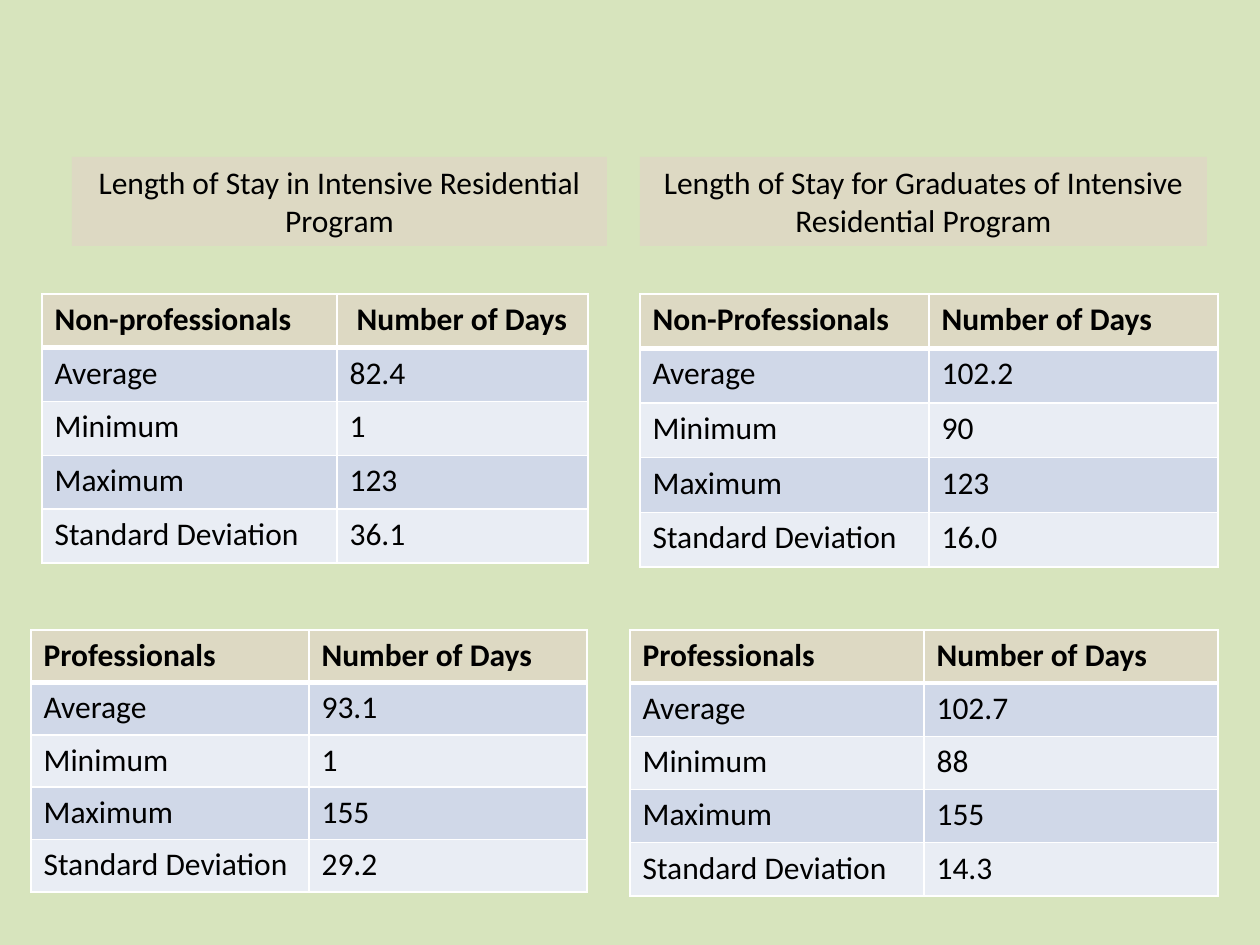
from pptx import Presentation
from pptx.dml.color import RGBColor as RGB
from pptx.enum.shapes import MSO_SHAPE as SHAPE
from pptx.enum.text import MSO_ANCHOR as ANCHOR, MSO_AUTO_SIZE as AUTO, PP_ALIGN as ALIGN
from pptx.oxml import parse_xml
from pptx.oxml.ns import nsdecls
from pptx.util import Pt

PX = 914400 / 126
FONT, SIZE = "Calibri", 18
COLORS = {"background": "D7E4BD", "header": "DDD9C3", "odd": "D0D8E8",
          "even": "E9EDF4", "border": "FFFFFF", "text": "000000"}

# caption, (left, top, width, height)
CAPTIONS = [
    ("Length of Stay in Intensive Residential Program", (72, 157, 535, 89)),
    ("Length of Stay for Graduates of Intensive Residential Program", (640, 157, 567, 89)),
]
MEASURES = ["Average", "Minimum", "Maximum", "Standard Deviation"]
# headers, values, (left, top), column widths, table height
TABLES = [
    (("Non-professionals", " Number of Days"), ("82.4", "1", "123", "36.1"),
     (42, 294), (295, 251), 269),
    (("Professionals", "Number of Days"), ("93.1", "1", "155", "29.2"),
     (31, 630), (278, 278), 262),
    (("Non-Professionals", "Number of Days"), ("102.2", "90", "123", "16.0"),
     (640, 294), (289, 289), 273),
    (("Professionals", "Number of Days"), ("102.7", "88", "155", "14.3"),
     (630, 630), (294, 294), 266),
]


def px(n):
    return round(n * PX)


def color(name):
    return RGB.from_string(COLORS[name])


def add_text(p, text, bold=False):
    r = p.add_run()
    r.text = text
    r.font.name, r.font.size, r.font.bold = FONT, Pt(SIZE), bold
    r.font.color.rgb = color("text")


def set_borders(cell, widths):
    """Draw the cell's edges; widths maps L, R, T and B to points."""
    tcPr = cell._tc.get_or_add_tcPr()
    for i, (side, width) in enumerate(widths.items()):
        tcPr.insert(i, parse_xml(
            f'<a:ln{side} {nsdecls("a")} w="{Pt(width)}"><a:solidFill>'
            f'<a:srgbClr val="{COLORS["border"]}"/></a:solidFill></a:ln{side}>'))


def add_caption(s, text, box):
    sp = s.shapes.add_shape(SHAPE.RECTANGLE, *map(px, box))
    sp.shadow.inherit = False
    sp.fill.solid()
    sp.fill.fore_color.rgb = color("header")
    sp.line.fill.background()
    tf = sp.text_frame
    tf.word_wrap, tf.auto_size = True, AUTO.SHAPE_TO_FIT_TEXT
    tf.vertical_anchor = ANCHOR.TOP
    p = tf.paragraphs[0]
    p.alignment = ALIGN.CENTER
    add_text(p, text)


def add_stay_table(s, headers, values, origin, widths, height):
    rows = [headers, *zip(MEASURES, values)]
    table = s.shapes.add_table(len(rows), len(headers), *map(px, origin),
                               px(sum(widths)), px(height)).table
    for col, width in zip(table.columns, widths):
        col.width = px(width)
    for i, row in enumerate(rows):
        table.rows[i].height = px(height / len(rows))
        fill = "header" if i == 0 else "odd" if i % 2 else "even"
        for j, text in enumerate(row):
            cell = table.cell(i, j)
            cell.fill.solid()
            cell.fill.fore_color.rgb = color(fill)
            set_borders(cell, {"L": 1, "R": 1, "T": 3 if i == 1 else 1,
                               "B": 3 if i == 0 else 1})
            add_text(cell.text_frame.paragraphs[0], text, bold=i == 0)


def main():
    prs = Presentation()
    prs.slide_width, prs.slide_height = px(1260), px(945)
    s = prs.slides.add_slide(prs.slide_layouts[6])
    s.background.fill.solid()
    s.background.fill.fore_color.rgb = color("background")
    for table in TABLES:
        add_stay_table(s, *table)
    for caption in CAPTIONS:
        add_caption(s, *caption)
    prs.save("out.pptx")


if __name__ == "__main__":
    main()
